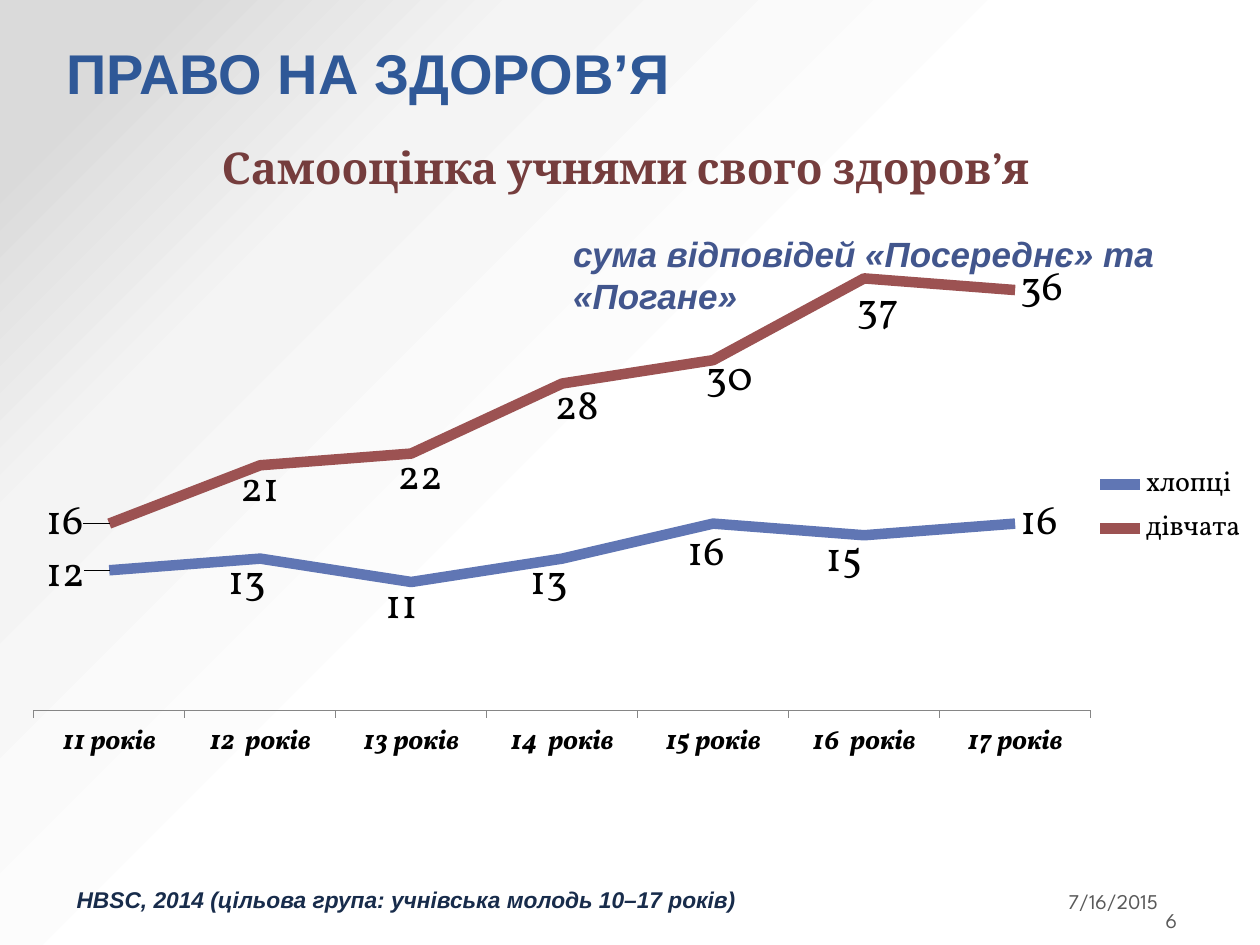
from lxml import etree
from pptx import Presentation
from pptx.chart.data import CategoryChartData
from pptx.dml.color import RGBColor
from pptx.enum.chart import XL_CHART_TYPE, XL_LABEL_POSITION, XL_LEGEND_POSITION, XL_TICK_MARK
from pptx.enum.text import MSO_ANCHOR, PP_ALIGN
from pptx.oxml import parse_xml
from pptx.oxml.ns import nsdecls, qn
from pptx.util import Inches, Pt

BLUE = RGBColor(0x2F, 0x58, 0x97)
SLATE = RGBColor(0x42, 0x56, 0x8D)
MAROON = RGBColor(0x75, 0x3D, 0x3D)
NAVY = RGBColor(0x18, 0x2C, 0x4B)
GRAY = RGBColor(0x59, 0x59, 0x59)
AXIS_GRAY = RGBColor(0x86, 0x86, 0x86)
BLACK = RGBColor(0, 0, 0)

BG_STOPS = [(50, "FFFFFF"), (76, "F4F4F4"), (92, "DADADA")]
AGES = ["11 років", "12  років", "13 років", "14  років",
        "15 років", "16  років", "17 років"]
# name, colour, values, label shifts as fractions of the chart (last point keeps its place)
SERIES = [
    ("хлопці", RGBColor(0x60, 0x76, 0xB4), [12, 13, 11, 13, 16, 15, 16],
     [(-0.055, 0.01), (-0.03, 0.045), (-0.025, 0.045),
      (-0.03, 0.045), (-0.025, 0.055), (-0.035, 0.045)]),
    ("дівчата", RGBColor(0x9C, 0x52, 0x52), [16, 21, 22, 28, 30, 37, 36],
     [(-0.055, 0), (-0.02, 0.045), (-0.015, 0.045),
      (-0.01, 0.045), (-0.01, 0.035), (-0.01, 0.06)]),
]


def set_background(s):
    stops = "".join(f'<a:gs pos="{pos * 1000}"><a:srgbClr val="{color}"/></a:gs>'
                    for pos, color in BG_STOPS)
    bg = parse_xml(
        f'<p:bg {nsdecls("p", "a")}><p:bgPr><a:gradFill rotWithShape="1">'
        f'<a:gsLst>{stops}</a:gsLst><a:path path="circle">'
        '<a:fillToRect l="100000" t="100000" r="0" b="0"/></a:path>'
        '</a:gradFill><a:effectLst/></p:bgPr></p:bg>')
    s.element.cSld.insert(0, bg)


def add_text(s, text, box, size, color, font="Arial", bold=False, italic=False,
             align=PP_ALIGN.LEFT, anchor=MSO_ANCHOR.TOP, left_inset=0.1, right_inset=0.1):
    tf = s.shapes.add_textbox(*(Inches(v) for v in box)).text_frame
    tf.word_wrap = True
    tf.vertical_anchor = anchor
    tf.margin_left, tf.margin_right = Inches(left_inset), Inches(right_inset)
    p = tf.paragraphs[0]
    p.text = text
    p.alignment = align
    set_font(p.font, size, color, font)
    p.font.bold, p.font.italic = bold, italic


def set_font(font, size, color=BLACK, name="Vollkorn"):
    font.size = Pt(size)
    font.name = name
    font.color.rgb = color


def manual_layout(**values):
    layout = etree.Element(qn("c:layout"))
    manual = etree.SubElement(layout, qn("c:manualLayout"))
    for tag, value in values.items():
        etree.SubElement(manual, qn(f"c:{tag}")).set("val", str(value))
    return layout


def style_series(series, color, shifts):
    series.smooth = False
    series.format.line.color.rgb = color
    series.format.line.width = Pt(6)
    labels = series.data_labels
    labels.show_value = True
    labels.position = XL_LABEL_POSITION.RIGHT
    set_font(labels.font, 24)
    for i, (x, y) in enumerate(shifts):
        label = series.points[i].data_label
        set_font(label.font, 24)
        label.position = XL_LABEL_POSITION.RIGHT
    for dLbl, (x, y) in zip(series._element.iter(qn("c:dLbl")), shifts):
        dLbl.find(qn("c:idx")).addnext(manual_layout(x=x, y=y))


def add_health_chart(s):
    data = CategoryChartData()
    data.categories = AGES
    for name, _, values, _ in SERIES:
        data.add_series(name, values)
    box = [Inches(v) for v in (0.12, 1.77, 9.88, 4.5)]
    chart = s.shapes.add_chart(XL_CHART_TYPE.LINE, *box, data).chart
    chart.has_title = False
    set_font(chart.font, 10)
    plot = chart.plots[0]
    plot.vary_by_categories = False
    for series, (_, color, _, shifts) in zip(plot.series, SERIES):
        style_series(series, color, shifts)

    # Axes
    ages = chart.category_axis
    ages.major_tick_mark = XL_TICK_MARK.OUTSIDE
    ages.format.line.color.rgb = AXIS_GRAY
    set_font(ages.tick_labels.font, 16)
    ages.tick_labels.font.bold = ages.tick_labels.font.italic = True
    scale = chart.value_axis
    scale.visible = False
    scale.has_major_gridlines = False
    scale.minimum_scale, scale.maximum_scale, scale.major_unit = 0, 40, 10

    # Legend and plot area
    chart.has_legend = True
    chart.legend.position = XL_LEGEND_POSITION.RIGHT
    chart.legend.include_in_layout = False
    set_font(chart.legend.font, 16)
    area = chart._chartSpace.chart.plotArea
    for old in area.findall(qn("c:layout")):
        area.remove(old)
    area.insert(0, manual_layout(layoutTarget="inner", xMode="edge", yMode="edge",
                                 x=0.015, y=0.036, w=0.849, h=0.824))


def main():
    prs = Presentation()
    prs.slide_width, prs.slide_height = Inches(10), Inches(7.5)
    s = prs.slides.add_slide(prs.slide_layouts[6])
    set_background(s)

    # Headings
    add_text(s, "ПРАВО НА ЗДОРОВ’Я", (0.43, 0.21, 9, 0.68), 32, BLUE,
             bold=True, anchor=MSO_ANCHOR.BOTTOM)
    add_text(s, "сума відповідей «Посереднє» та «Погане»", (4.45, 1.8, 5.55, 0.44),
             20, SLATE, bold=True, italic=True)
    add_text(s, "Самооцінка учнями свого здоров’я", (1.38, 1.07, 7.17, 0.52),
             25, MAROON, "Cambria", bold=True, align=PP_ALIGN.CENTER)

    add_health_chart(s)

    # Footer
    add_text(s, "HBSC, 2014 (цільова група: учнівська молодь 10–17 років)",
             (0.51, 6.98, 6.46, 0.32), 13, NAVY, bold=True, italic=True)
    add_text(s, "7/16/2015", (6.96, 6.95, 2.28, 0.4), 12, GRAY, "League Spartan",
             align=PP_ALIGN.RIGHT, anchor=MSO_ANCHOR.MIDDLE, right_inset=0.05)
    add_text(s, "6", (9.22, 7.11, 0.78, 0.39), 12, GRAY, "League Spartan",
             anchor=MSO_ANCHOR.MIDDLE, left_inset=0.03, right_inset=0.05)
    prs.save("out.pptx")


if __name__ == "__main__":
    main()
